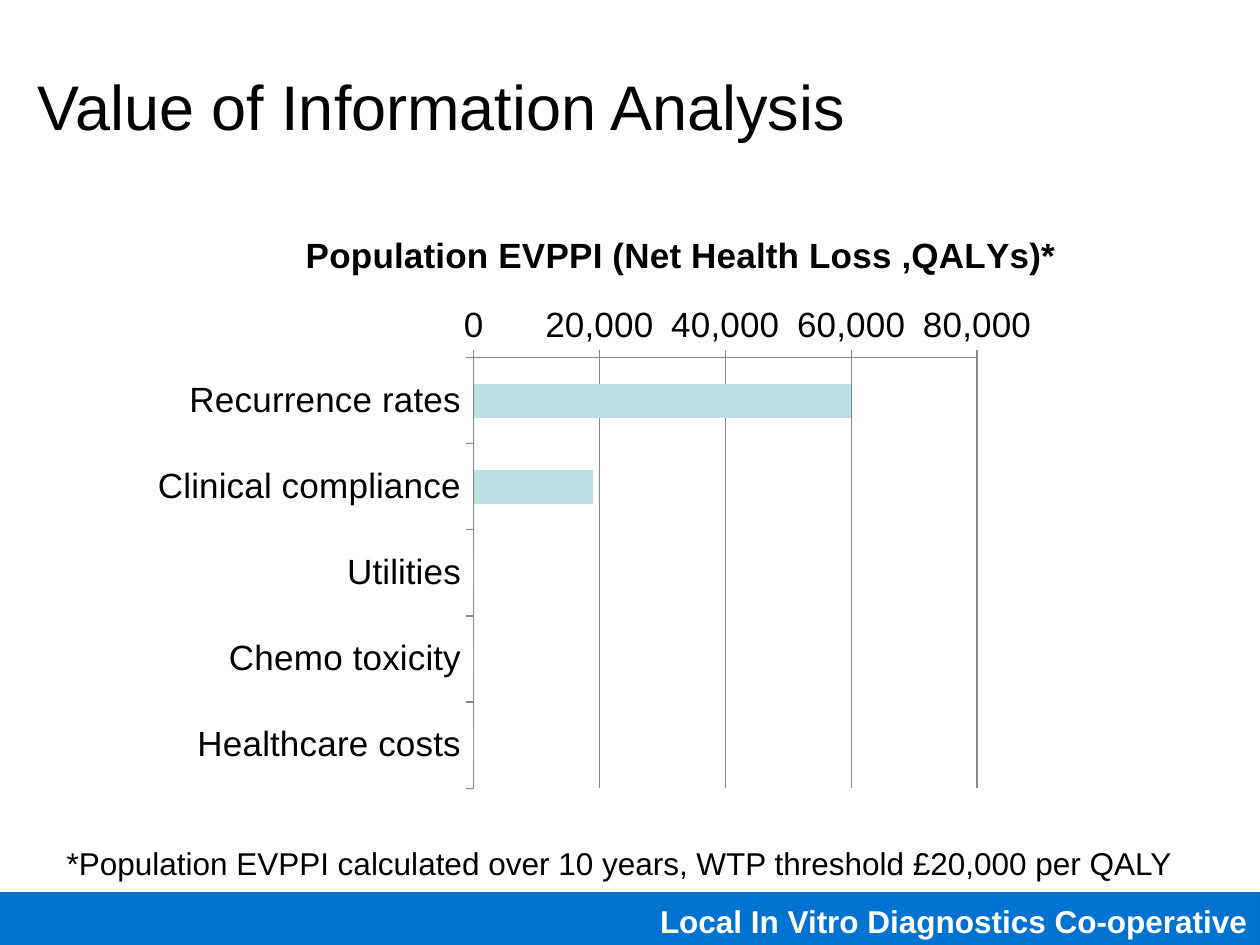
from lxml import etree
from pptx import Presentation
from pptx.chart.data import CategoryChartData
from pptx.dml.color import RGBColor
from pptx.enum.chart import XL_CHART_TYPE as ChartType, XL_TICK_MARK as TickMark
from pptx.enum.shapes import MSO_SHAPE as Shape
from pptx.enum.text import MSO_ANCHOR as Anchor, MSO_AUTO_SIZE as AutoSize, PP_ALIGN as Align
from pptx.oxml.ns import qn
from pptx.util import Inches, Pt

BLACK, WHITE, GREY = "000000", "FFFFFF", "878787"
BLUE, BLUE_EDGE, PALE_TEAL = "0072CF", "0072C6", "BBE0E3"

EVPPI = {
    "Recurrence rates": 60000,
    "Clinical compliance": 19000,
    "Utilities": 0,
    "Chemo toxicity": 0,
    "Healthcare costs": 0,
}


def rgb(color):
    return RGBColor.from_string(color)


def style_font(font, size, color=BLACK, bold=False):
    font.name = "Arial"
    font.size = Pt(size)
    font.bold = bold
    font.color.rgb = rgb(color)


def write(frame, text, size, color=BLACK, bold=False, align=Align.LEFT):
    frame.word_wrap = True
    paragraph = frame.paragraphs[0]
    paragraph.text = text
    paragraph.alignment = align
    style_font(paragraph.font, size, color, bold)


def place(shape, box):
    shape.left, shape.top, shape.width, shape.height = box


def set_layout(parent, **values):
    """Give a plot area or axis title a manual layout, in fractions of the chart."""
    for old in parent.findall(qn("c:layout")):
        parent.remove(old)
    layout = etree.Element(qn("c:layout"))
    manual = etree.SubElement(layout, qn("c:manualLayout"))
    for tag, value in values.items():
        etree.SubElement(manual, qn(f"c:{tag}")).set("val", str(value))
    text = parent.find(qn("c:tx"))
    parent.insert(0 if text is None else parent.index(text) + 1, layout)


def add_footer(slide, box):
    bar = slide.shapes.add_shape(Shape.RECTANGLE, *box)
    bar.shadow.inherit = False
    bar.fill.solid()
    bar.fill.fore_color.rgb = rgb(BLUE)
    bar.line.color.rgb = rgb(BLUE_EDGE)
    bar.line.width = Pt(2)
    bar.text_frame.vertical_anchor = Anchor.MIDDLE
    write(bar.text_frame, "Local In Vitro Diagnostics Co-operative", 18, WHITE, True, Align.RIGHT)


def set_title(slide, box):
    title = slide.shapes.title
    place(title, box)
    title.text_frame.vertical_anchor = Anchor.MIDDLE
    write(title.text_frame, "Value of Information Analysis", 36)


def add_evppi_chart(slide, box):
    data = CategoryChartData(number_format="#,##0")
    data.categories = list(EVPPI)
    data.add_series("Series 1", list(EVPPI.values()))
    chart = slide.shapes.add_chart(ChartType.BAR_CLUSTERED, *box, data).chart
    chart.has_legend = False
    chart.has_title = False
    style_font(chart.font, 20)

    plot = chart.plots[0]
    plot.gap_width = 150
    plot.vary_by_categories = False
    bars = plot.series[0].format.fill
    bars.solid()
    bars.fore_color.rgb = rgb(PALE_TEAL)

    factors, losses = chart.category_axis, chart.value_axis
    factors.reverse_order = True
    factors.has_major_gridlines = False
    losses.minimum_scale, losses.maximum_scale, losses.major_unit = 0, 80000, 20000
    losses.has_major_gridlines = True
    losses.tick_labels.number_format = "#,##0"
    losses.tick_labels.number_format_is_linked = False
    for axis in (factors, losses):
        axis.major_tick_mark = TickMark.OUTSIDE
        axis.minor_tick_mark = TickMark.NONE
    for line in (factors.format.line, losses.format.line, losses.major_gridlines.format.line):
        line.color.rgb = rgb(GREY)
        line.width = Pt(0.75)

    heading = losses.axis_title
    write(heading.text_frame, "Population EVPPI (Net Health Loss ,QALYs)*", 20, bold=True,
          align=Align.CENTER)
    set_layout(heading._element, xMode="edge", yMode="edge", x=0.19, y=0.05)
    set_layout(plot._element.getparent(), layoutTarget="inner", xMode="edge", yMode="edge",
               x=0.344, y=0.26, w=0.445, h=0.689)


def add_footnote(slide, box):
    frame = slide.shapes.add_textbox(*box).text_frame
    write(frame, "*Population EVPPI calculated over 10 years, WTP threshold £20,000 per QALY", 18)
    frame.auto_size = AutoSize.SHAPE_TO_FIT_TEXT


def main():
    deck = Presentation()
    deck.slide_width, deck.slide_height = Inches(10), Inches(7.5)
    slide = deck.slides.add_slide(deck.slide_layouts[5])
    add_footer(slide, (0, Inches(7.09), deck.slide_width, Inches(0.44)))
    set_title(slide, (Inches(0.2), Inches(0.21), Inches(9), Inches(1.25)))
    add_evppi_chart(slide, (Inches(0.67), Inches(1.55), Inches(8.98), Inches(4.96)))
    add_footnote(slide, (Inches(0.43), Inches(6.65), Inches(9.06), Inches(0.4)))
    deck.save("out.pptx")


if __name__ == "__main__":
    main()
